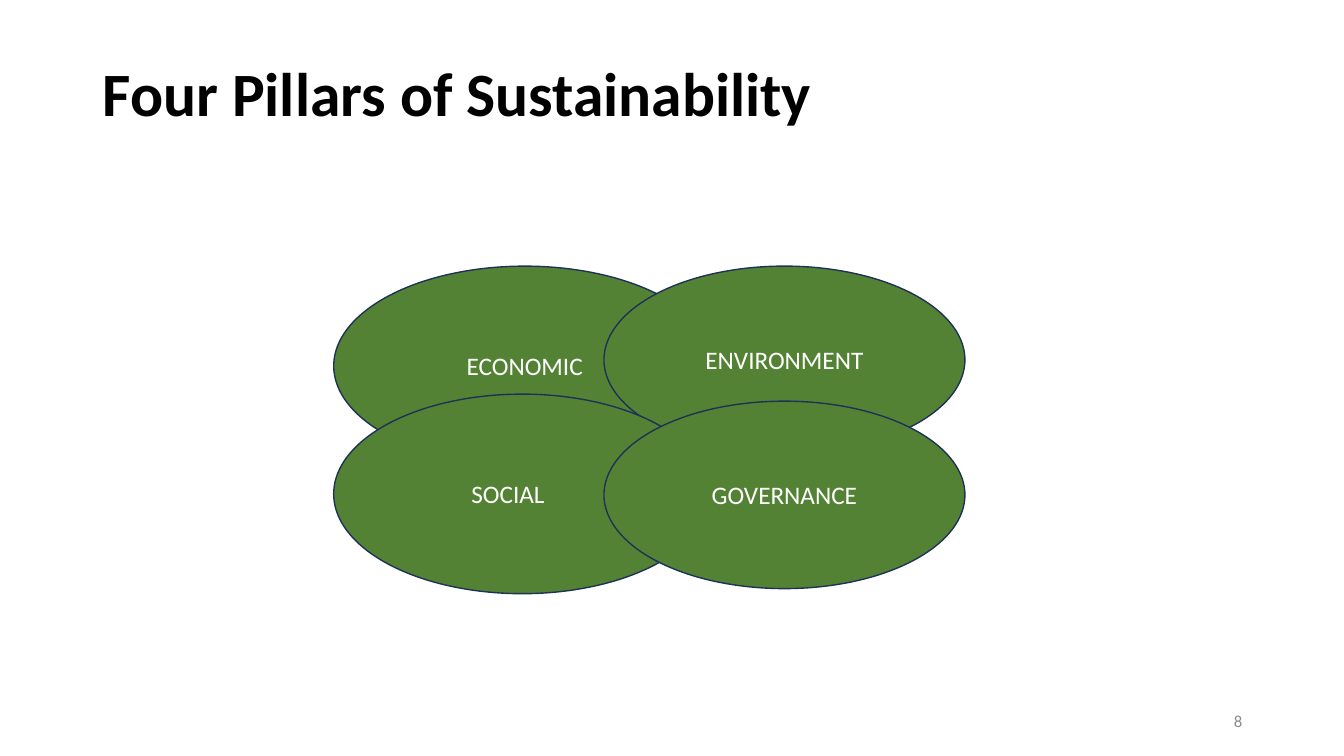
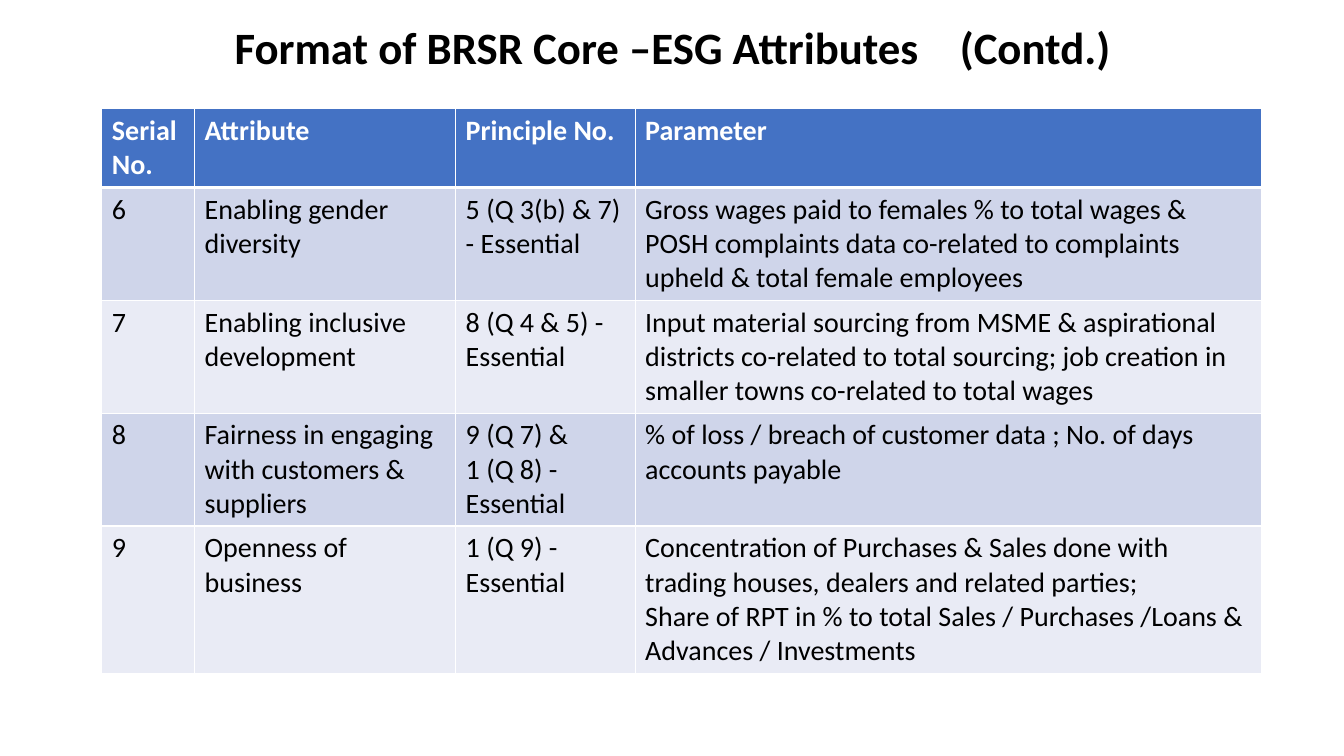
from lxml import etree
from pptx import Presentation
from pptx import util as u
from pptx.dml.color import RGBColor
from pptx.enum import shapes, text
from pptx.oxml.ns import qn

HUES = {
    "ink": "000000", "white": "FFFFFF", "gray": "8C8C8C",
    "leaf": "548235", "rim": "1E3256",
    "head": "4472C4", "odd": "CFD5EA", "even": "E9EBF5",
}
ALIGN = text.PP_ALIGN


def hue(name):
    return RGBColor.from_string(HUES[name])


def apply(item, **values):
    for key, value in values.items():
        setattr(item, key, value)


class Deck:
    font = "Calibri"

    def __init__(self):
        self.prs = Presentation()
        apply(self.prs, slide_width=u.Inches(13.33), slide_height=u.Inches(7.5))
        self.slide = None

    def page(self):
        self.slide = self.prs.slides.add_slide(self.prs.slide_layouts[6])

    def add_run(self, para, words, size, color="ink", bold=False):
        run = para.add_run()
        run.text = words
        apply(run.font, name=self.font, size=u.Pt(size), bold=bold)
        run.font.color.rgb = hue(color)
        return run

    def put(self, frame, words, size, align=ALIGN.LEFT, lead=None, **style):
        frame.word_wrap = True
        for i, line in enumerate(words.split("\n")):
            para = frame.add_paragraph() if i else frame.paragraphs[0]
            apply(para, alignment=align, line_spacing=lead)
            self.add_run(para, line, size, **style)

    def label(self, words, box, size, **style):
        frame = self.slide.shapes.add_textbox(*map(u.Inches, box)).text_frame
        frame.vertical_anchor = text.MSO_ANCHOR.MIDDLE
        self.put(frame, words, size, **style)
        return frame.paragraphs[0]

    def title(self, words, top, height, size, align=ALIGN.LEFT):
        return self.label(words, (0.92, top, 11.5, height), size,
                          bold=True, align=align, lead=0.9)

    def number(self, value):
        self.label(str(value), (9.42, 6.95, 3, 0.4), 12, color="gray", align=ALIGN.RIGHT)

    def oval(self, words, box, inset=0.1):
        oval = self.slide.shapes.add_shape(shapes.MSO_SHAPE.OVAL, *map(u.Inches, box))
        oval.shadow.inherit = False
        oval.fill.solid()
        oval.fill.fore_color.rgb = hue("leaf")
        oval.line.color.rgb = hue("rim")
        oval.line.width = u.Pt(1)
        apply(oval.text_frame, vertical_anchor=text.MSO_ANCHOR.MIDDLE,
              margin_right=u.Inches(inset))
        self.put(oval.text_frame, words, 18, color="white", align=ALIGN.CENTER)

    def border(self, cell, top, bottom):
        props = cell._tc.get_or_add_tcPr()
        for i, (side, width) in enumerate({"L": 1, "R": 1, "T": top, "B": bottom}.items()):
            line = etree.Element(qn(f"a:ln{side}"), w=str(u.Pt(width)))
            fill = etree.SubElement(line, qn("a:solidFill"))
            etree.SubElement(fill, qn("a:srgbClr"), val=HUES["white"])
            props.insert(i, line)

    def table(self, rows, left, top, widths, lines):
        highs = [0.1 + 0.34 * count for count in lines]
        box = left, top, sum(widths), sum(highs)
        grid = self.slide.shapes.add_table(
            len(rows), len(widths), *map(u.Inches, box)).table
        for col, width in zip(grid.columns, widths):
            col.width = u.Inches(width)
        for r, (words, high) in enumerate(zip(rows, highs)):
            grid.rows[r].height = u.Inches(high)
            first = r == 0
            shade = "head" if first else "odd" if r % 2 else "even"
            for c, word in enumerate(words):
                cell = grid.cell(r, c)
                cell.fill.solid()
                cell.fill.fore_color.rgb = hue(shade)
                self.border(cell, 3 if r == 1 else 1, 3 if first else 1)
                self.put(cell.text_frame, word, 20,
                         color="white" if first else "ink", bold=first)


def pillars(deck):
    deck.page()
    deck.title("Four Pillars of Sustainability", 0.4, 1.12, 44)
    west, east = 3.31, 5.99
    deck.oval("ECONOMIC", (west, 2.64, 3.79, 1.98))
    deck.oval("ENVIRONMENT", (east, 2.64, 3.58, 1.86))
    deck.oval("SOCIAL", (west, 3.91, 3.74, 1.98), inset=0.38)
    deck.oval("GOVERNANCE", (east, 3.98, 3.58, 1.86))
    deck.number(8)


def core(deck):
    deck.page()
    size = 32
    title = deck.title("Format of BRSR Core –ESG Attributes", 0.2, 0.6, size, ALIGN.CENTER)
    gap = deck.add_run(title, " ", size, bold=True)
    gap._r.get_or_add_rPr().set("spc", "2170")
    deck.add_run(title, "(Contd.)", size, bold=True)
    rows = [
        ("Serial No.", "Attribute", "Principle No.", "Parameter"),
        ("6", "Enabling gender diversity", "5 (Q 3(b) & 7) - Essential",
         "Gross wages paid to females % to total wages & POSH complaints data "
         "co-related to complaints upheld & total female employees"),
        ("7", "Enabling inclusive development", "8 (Q 4 & 5) - Essential",
         "Input material sourcing from MSME & aspirational districts co-related to "
         "total sourcing; job creation in smaller towns co-related to total wages"),
        ("8", "Fairness in engaging with customers & suppliers",
         "9 (Q 7) &\n1 (Q 8) - Essential",
         "% of loss / breach of customer data ; No. of days accounts payable"),
        ("9", "Openness of business", "1 (Q 9) - Essential",
         "Concentration of Purchases & Sales done with trading houses, dealers and "
         "related parties;\nShare of RPT in % to total Sales / Purchases /Loans & "
         "Advances / Investments"),
    ]
    deck.table(rows, 1.01, 1.08, (0.92, 2.59, 1.78, 6.21), (2, 3, 3, 3, 4))


def main():
    deck = Deck()
    pillars(deck)
    core(deck)
    deck.prs.save("out.pptx")


if __name__ == "__main__":
    main()
